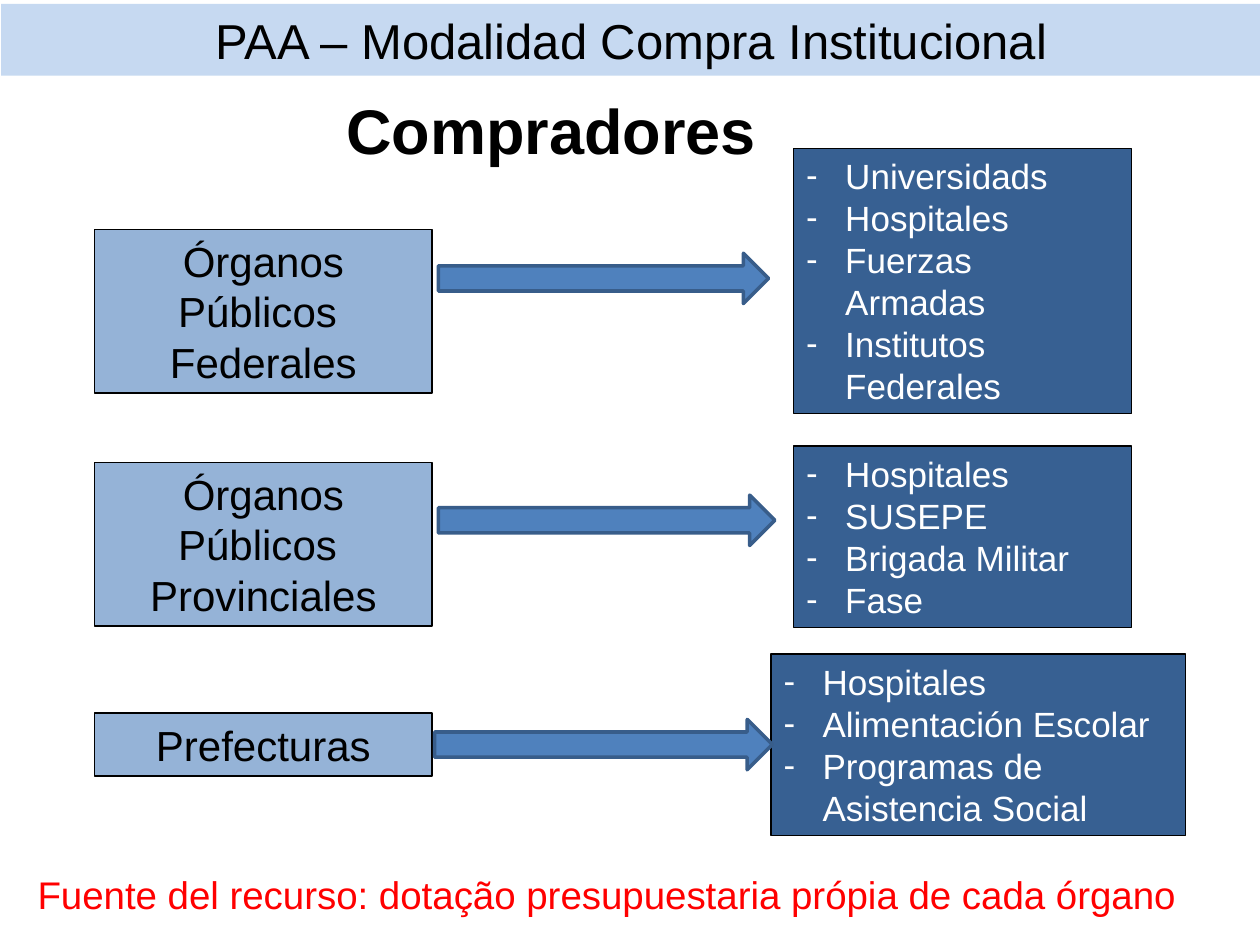
from lxml import etree
from pptx import Presentation
from pptx.dml.color import RGBColor
from pptx.enum.shapes import MSO_SHAPE
from pptx.enum.text import MSO_ANCHOR, MSO_AUTO_SIZE, PP_ALIGN
from pptx.oxml.ns import qn
from pptx.util import Inches, Pt

RECTANGLE = MSO_SHAPE.RECTANGLE
RIGHT_ARROW = MSO_SHAPE.RIGHT_ARROW
TOP, MIDDLE = MSO_ANCHOR.TOP, MSO_ANCHOR.MIDDLE
LEFT, CENTER, JUSTIFY = PP_ALIGN.LEFT, PP_ALIGN.CENTER, PP_ALIGN.JUSTIFY
NO_AUTOFIT = MSO_AUTO_SIZE.NONE

BLACK = RGBColor(0x00, 0x00, 0x00)
WHITE = RGBColor(0xFF, 0xFF, 0xFF)
RED = RGBColor(0xFF, 0x00, 0x00)
BANNER_BLUE = RGBColor(0xC6, 0xD9, 0xF1)
BODY_BLUE = RGBColor(0x95, 0xB3, 0xD7)
BUYER_BLUE = RGBColor(0x37, 0x60, 0x92)
ARROW_BLUE = RGBColor(0x4F, 0x81, 0xBD)
ARROW_EDGE = RGBColor(0x38, 0x5D, 0x8A)

BODY_LEFT, BOX_WIDTH, ARROW_HEIGHT = 0.75, 2.68, 0.4
INDENT = Inches(0.31)

ROWS = [
    {
        "body": ["Órganos Públicos ", "Federales"],
        "body_span": (1.82, 1.3),
        "arrow": (3.48, 2.01, 2.62),
        "buyers": ["Universidads", "Hospitales", "Fuerzas Armadas", "Institutos Federales"],
        "buyers_box": (6.3, 1.18, BOX_WIDTH, 2.1),
        "align": JUSTIFY,
    },
    {
        "body": ["Órganos Públicos ", "Provinciales"],
        "body_span": (3.67, 1.3),
        "arrow": (3.48, 3.93, 2.67),
        "buyers": ["Hospitales", "SUSEPE", "Brigada Militar", "Fase"],
        "buyers_box": (6.3, 3.54, BOX_WIDTH, 1.44),
        "align": JUSTIFY,
    },
    {
        "body": ["Prefecturas"],
        "body_span": (5.66, 0.5),
        "arrow": (3.45, 5.71, 2.68),
        "buyers": ["Hospitales", "Alimentación Escolar", "Programas de Asistencia Social"],
        "buyers_box": (6.12, 5.19, 3.29, 1.44),
        "align": LEFT,
    },
]


class SlideBuilder:
    font_name = "Arial"

    def __init__(self, slide):
        self.slide = slide

    def set_text(self, shape, lines, size, color, align=LEFT, anchor=TOP, bold=False, wrap=True):
        text_frame = shape.text_frame
        text_frame.text = "\n".join(lines)
        text_frame.auto_size = NO_AUTOFIT
        text_frame.word_wrap = wrap
        text_frame.vertical_anchor = anchor
        for paragraph in text_frame.paragraphs:
            paragraph.alignment = align
            for run in paragraph.runs:
                run.font.name = self.font_name
                run.font.size = Pt(size)
                run.font.bold = bold
                run.font.color.rgb = color

    def title(self, box, text):
        shape = self.slide.shapes.title
        shape.left, shape.top, shape.width, shape.height = map(Inches, box)
        shape.fill.solid()
        shape.fill.fore_color.rgb = BANNER_BLUE
        self.set_text(shape, [text], 28, BLACK, CENTER, MIDDLE)

    def label(self, box, text, size, color, **style):
        shape = self.slide.shapes.add_textbox(*map(Inches, box))
        self.set_text(shape, [text], size, color, **style)

    def filled(self, kind, box, fill, line, line_width):
        shape = self.slide.shapes.add_shape(kind, *map(Inches, box))
        shape.shadow.inherit = False
        shape.fill.solid()
        shape.fill.fore_color.rgb = fill
        shape.line.color.rgb = line
        shape.line.width = Pt(line_width)
        return shape

    def public_body(self, box, lines):
        shape = self.filled(RECTANGLE, box, BODY_BLUE, BLACK, 0.75)
        self.set_text(shape, lines, 24, BLACK, CENTER)

    def buyer_list(self, box, lines, align):
        shape = self.filled(RECTANGLE, box, BUYER_BLUE, BLACK, 0.75)
        self.set_text(shape, lines, 20, WHITE, align)
        for paragraph in shape.text_frame.paragraphs:
            properties = paragraph._p.get_or_add_pPr()
            properties.set("marL", str(INDENT))
            properties.set("indent", str(-INDENT))
            bullet_color = etree.SubElement(properties, qn("a:buClr"))
            etree.SubElement(bullet_color, qn("a:srgbClr"), val=str(WHITE))
            etree.SubElement(properties, qn("a:buFont"), typeface=self.font_name)
            etree.SubElement(properties, qn("a:buChar"), char="-")

    def arrow(self, left, top, width):
        self.filled(RIGHT_ARROW, (left, top, width, ARROW_HEIGHT), ARROW_BLUE, ARROW_EDGE, 2)


def main():
    presentation = Presentation()
    presentation.slide_width = Inches(10)
    presentation.slide_height = Inches(7.5)
    slide = presentation.slides.add_slide(presentation.slide_layouts[5])
    builder = SlideBuilder(slide)

    builder.title((0.01, 0.03, 10, 0.57), "PAA – Modalidad Compra Institucional")
    builder.label((2.65, 0.68, 3.45, 0.7), "Compradores", 36, BLACK, bold=True, wrap=False)
    for row in ROWS:
        top, height = row["body_span"]
        builder.public_body((BODY_LEFT, top, BOX_WIDTH, height), row["body"])
        builder.buyer_list(row["buyers_box"], row["buyers"], row["align"])
        builder.arrow(*row["arrow"])
    builder.label(
        (0.2, 6.69, 9.53, 0.81),
        "Fuente del recurso: dotação presupuestaria própia de cada órgano",
        22, RED, anchor=MIDDLE,
    )
    presentation.save("out.pptx")


if __name__ == "__main__":
    main()
